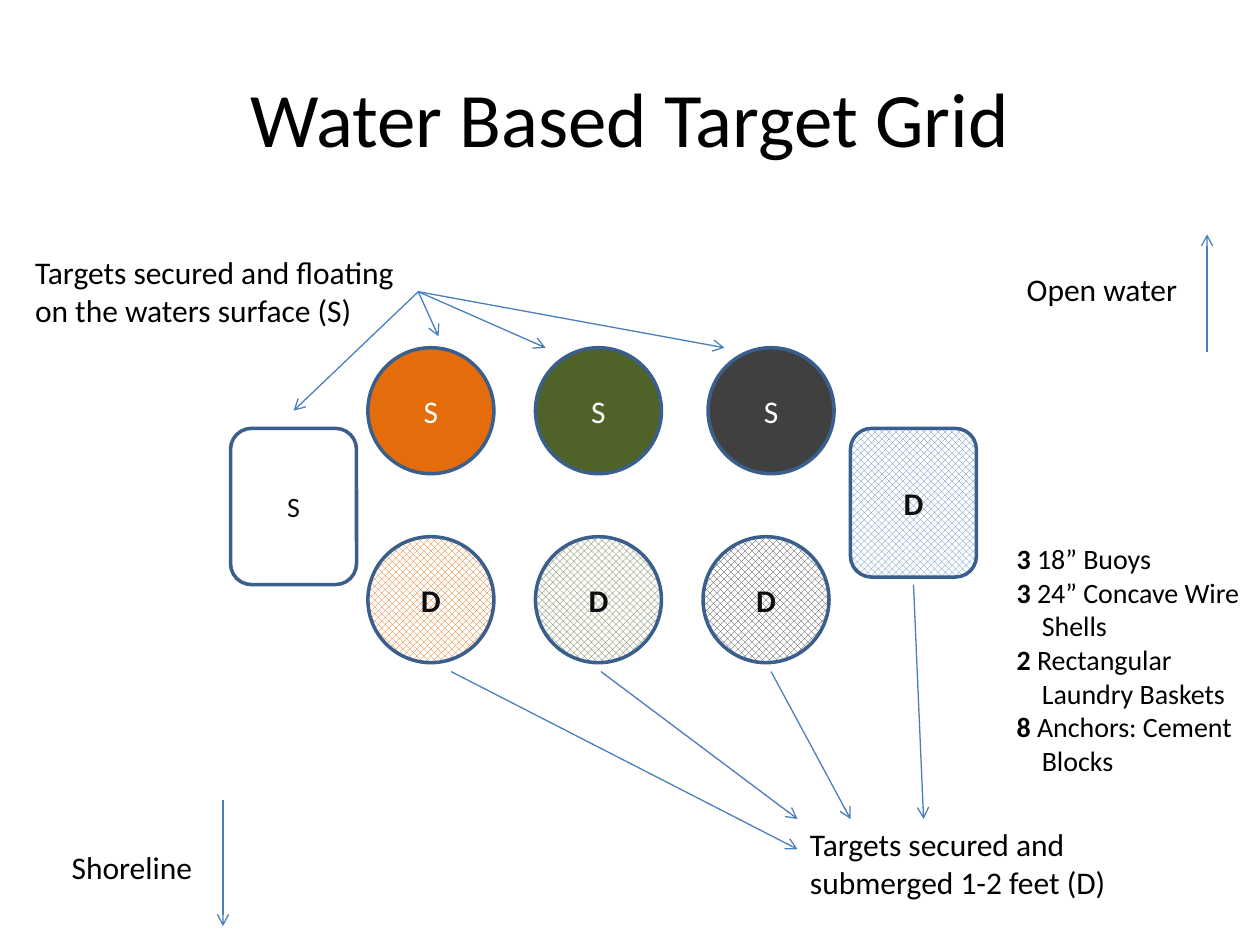
import dataclasses

import lxml.etree
import pptx
import pptx.dml.color
import pptx.enum.dml
import pptx.enum.shapes
import pptx.enum.text
import pptx.oxml.ns
import pptx.util

Inches = pptx.util.Inches
ShapeType = pptx.enum.shapes.MSO_SHAPE
Align = pptx.enum.text.PP_ALIGN
Anchor = pptx.enum.text.MSO_ANCHOR


@dataclasses.dataclass(frozen=True)
class Theme:
    font: str = "Calibri"
    title_size: int = 44
    body_size: int = 18
    small_size: int = 16
    black: str = "000000"
    dark: str = "0D0D0D"
    white: str = "FFFFFF"
    orange: str = "E46C0A"
    green: str = "4F6228"
    gray: str = "404040"
    blue: str = "4F81BD"
    outline: str = "3A5F8C"
    arrow: str = "4B7EBC"
    outline_width: float = 2
    arrow_width: float = 0.75


def rgb(value):
    return pptx.dml.color.RGBColor.from_string(value)


class SlideBuilder:
    def __init__(self, slide, theme):
        self.slide = slide
        self.theme = theme

    def format_run(self, run, size, color, bold=False):
        run.font.name = self.theme.font
        run.font.size = pptx.util.Pt(size)
        run.font.color.rgb = rgb(color)
        run.font.bold = bold

    def title(self, text, left, top, width, height):
        shape = self.slide.shapes.title
        shape.left, shape.top = Inches(left), Inches(top)
        shape.width, shape.height = Inches(width), Inches(height)
        shape.text_frame.text = text
        shape.text_frame.vertical_anchor = Anchor.MIDDLE
        paragraph = shape.text_frame.paragraphs[0]
        paragraph.alignment = Align.CENTER
        self.format_run(paragraph.runs[0], self.theme.title_size, self.theme.black)

    def text_box(self, left, top, width, height):
        shape = self.slide.shapes.add_textbox(
            Inches(left), Inches(top), Inches(width), Inches(height))
        shape.text_frame.word_wrap = False
        shape.text_frame.auto_size = pptx.enum.text.MSO_AUTO_SIZE.SHAPE_TO_FIT_TEXT
        return shape

    def label(self, text, left, top, width, height):
        shape = self.text_box(left, top, width, height)
        shape.text_frame.text = text
        for paragraph in shape.text_frame.paragraphs:
            self.format_run(paragraph.runs[0], self.theme.body_size, self.theme.black)
        return shape

    def inventory(self, lines, left, top, width, height):
        """Each line is a bold count and a text; lines without a count are indented."""
        frame = self.text_box(left, top, width, height).text_frame
        for index, (count, text) in enumerate(lines):
            paragraph = frame.add_paragraph() if index else frame.paragraphs[0]
            if count:
                run = paragraph.add_run()
                run.text = count
                self.format_run(run, self.theme.small_size, self.theme.black, bold=True)
                text = " " + text
            else:
                paragraph._p.get_or_add_pPr().set("marL", str(Inches(0.2)))
            run = paragraph.add_run()
            run.text = text
            self.format_run(run, self.theme.small_size, self.theme.black)

    def target(self, kind, text, left, top, height, color, text_color,
               size=None, submerged=False):
        shape = self.slide.shapes.add_shape(
            kind, Inches(left), Inches(top), Inches(1), Inches(height))
        shape.shadow.inherit = False
        if submerged:
            shape.fill.patterned()
            shape.fill.pattern = pptx.enum.dml.MSO_PATTERN.LARGE_CHECKER_BOARD
            shape.fill.fore_color.rgb = rgb(color)
            shape.fill.back_color.rgb = rgb(self.theme.white)
        else:
            shape.fill.solid()
            shape.fill.fore_color.rgb = rgb(color)
        shape.line.color.rgb = rgb(self.theme.outline)
        shape.line.width = pptx.util.Pt(self.theme.outline_width)
        shape.text_frame.text = text
        shape.text_frame.vertical_anchor = Anchor.MIDDLE
        paragraph = shape.text_frame.paragraphs[0]
        paragraph.alignment = Align.CENTER
        self.format_run(paragraph.runs[0], size or self.theme.body_size,
                        text_color, bold=submerged)

    def arrow(self, start, end, source=None):
        """Draw an arrow; a source shape is joined at the middle of its right side."""
        connector = self.slide.shapes.add_connector(
            pptx.enum.shapes.MSO_CONNECTOR.STRAIGHT,
            *(Inches(value) for value in (*start, *end)))
        if source is not None:
            connector.begin_connect(source, 3)
        connector.line.color.rgb = rgb(self.theme.arrow)
        connector.line.width = pptx.util.Pt(self.theme.arrow_width)
        lxml.etree.SubElement(connector.line._get_or_add_ln(),
                              pptx.oxml.ns.qn("a:tailEnd"), type="arrow")
        lxml.etree.SubElement(connector._element.spPr, pptx.oxml.ns.qn("a:effectLst"))


def main():
    presentation = pptx.Presentation()
    presentation.slide_width = Inches(10)
    presentation.slide_height = Inches(7.5)
    theme = Theme()
    slide = presentation.slides.add_slide(presentation.slide_layouts[5])
    builder = SlideBuilder(slide, theme)

    builder.title("Water Based Target Grid", 0.5, 0.3, 9, 1.25)
    surface_label = builder.label(
        "Targets secured and floating\non the waters surface (S)", 0.18, 1.96, 3.14, 0.71)
    builder.label("Targets secured and\nsubmerged 1-2 feet (D)", 6.33, 6.5, 2.58, 0.71)

    for start, end in (((3.58, 5.33), (6.33, 6.74)),
                       ((4.77, 5.33), (6.33, 6.5)),
                       ((6.12, 5.33), (6.75, 6.5)),
                       ((7.25, 4.64), (7.33, 6.5))):
        builder.arrow(start, end)

    for color, surface_left, submerged_left in ((theme.orange, 2.92, 2.92),
                                                (theme.green, 4.25, 4.25),
                                                (theme.gray, 5.62, 5.58)):
        builder.target(ShapeType.OVAL, "D", submerged_left, 4.26, 1, color,
                       theme.dark, submerged=True)
        builder.target(ShapeType.OVAL, "S", surface_left, 2.76, 1, color, theme.white)
    builder.target(ShapeType.ROUNDED_RECTANGLE, "S", 1.83, 3.4, 1.24, theme.white,
                   theme.dark, size=theme.small_size)
    builder.target(ShapeType.ROUNDED_RECTANGLE, "D", 6.75, 3.4, 1.18, theme.blue,
                   theme.dark, submerged=True)

    for end in ((3.48, 2.67), (2.33, 3.26), (4.33, 2.76), (5.75, 2.76)):
        builder.arrow((3.32, 2.32), end, source=surface_label)

    builder.label("Shoreline", 0.47, 6.68, 1.17, 0.4)
    builder.label("Open water", 8.05, 2.09, 1.41, 0.4)
    builder.arrow((1.77, 6.35), (1.77, 7.35))
    builder.arrow((9.58, 2.79), (9.58, 1.86))

    builder.inventory((("3", "18” Buoys"),
                       ("3", "24” Concave Wire"),
                       ("", "Shells"),
                       ("2", "Rectangular"),
                       ("", "Laundry Baskets"),
                       ("8", "Anchors: Cement"),
                       ("", "Blocks")), 7.97, 4.25, 1.99, 1.99)

    presentation.save("out.pptx")


if __name__ == "__main__":
    main()
